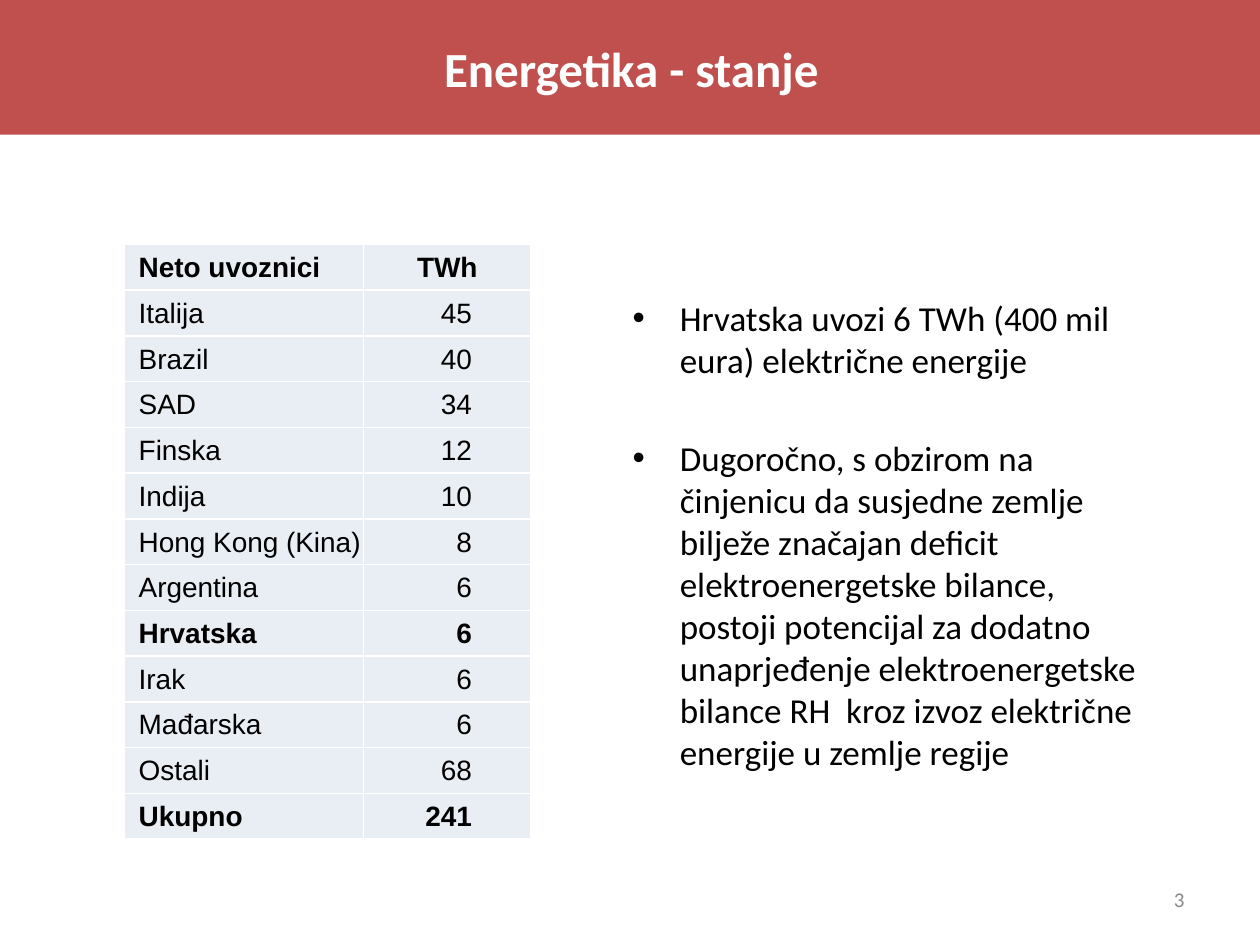
"""Builds the slide on net importers of electricity."""
from lxml import etree
from pptx import Presentation
from pptx import util as u
from pptx.dml import color as col
from pptx.enum import shapes, text
from pptx.oxml import ns

WHITE = col.RGBColor(0xFF, 0xFF, 0xFF)
BLACK = col.RGBColor(0x00, 0x00, 0x00)
GREY = col.RGBColor(0x89, 0x89, 0x89)
RED = col.RGBColor(0xC0, 0x50, 0x4D)
PALE = col.RGBColor(0xE9, 0xED, 0xF4)

LEFT, MID, RIGHT = text.PP_ALIGN.LEFT, text.PP_ALIGN.CENTER, text.PP_ALIGN.RIGHT

ROWS = [
    ("Neto uvoznici", "TWh"), ("Italija", "45"), ("Brazil", "40"),
    ("SAD", "34"), ("Finska", "12"), ("Indija", "10"),
    ("Hong Kong (Kina)", "8"), ("Argentina", "6"), ("Hrvatska", "6"),
    ("Irak", "6"), ("Mađarska", "6"), ("Ostali", "68"), ("Ukupno", "241"),
]
STRONG = {"Neto uvoznici", "Hrvatska", "Ukupno"}
POINTS = [
    "Hrvatska uvozi 6 TWh (400 mil eura) električne energije",
    "Dugoročno, s obzirom na činjenicu da susjedne zemlje bilježe značajan "
    "deficit elektroenergetske bilance, postoji potencijal za dodatno "
    "unaprjeđenje elektroenergetske bilance RH  kroz izvoz električne "
    "energije u zemlje regije",
]


class Deck:
    """Holds the style and the current slide."""

    def __init__(self, slide, face="Calibri", cells="Arial"):
        self.slide, self.face, self.cells = slide, face, cells

    def run(self, para, words, size, tint, bold=False, face=None):
        """Adds one styled run to a paragraph."""
        run = para.add_run()
        run.text = words
        font = run.font
        font.name, font.size, font.bold = face or self.face, u.Pt(size), bold
        font.color.rgb = tint

    def bar(self, x, y, w, h, tint):
        """Draws a plain filled rectangle."""
        bar = self.slide.shapes.add_shape(
            shapes.MSO_SHAPE.RECTANGLE, *map(u.Pt, (x, y, w, h)))
        bar.shadow.inherit = False
        bar.fill.solid()
        bar.fill.fore_color.rgb = tint
        bar.line.fill.background()

    def box(self, x, y, w, h, anchor=text.MSO_ANCHOR.MIDDLE):
        """Adds an empty wrapping text box and returns its frame."""
        frame = self.slide.shapes.add_textbox(
            *map(u.Pt, (x, y, w, h))).text_frame
        frame.word_wrap = True
        frame.vertical_anchor = anchor
        return frame

    def label(self, words, x, y, w, h, size, tint, align, bold=False):
        """Adds a line of text."""
        para = self.box(x, y, w, h).paragraphs[0]
        para.alignment = align
        para.line_spacing = 0.9
        self.run(para, words, size, tint, bold)

    def list(self, items, x, y, w, h, size, top, gap, dent):
        """Adds a bulleted list."""
        frame = self.box(x, y, w, h, text.MSO_ANCHOR.TOP)
        frame.margin_top = u.Pt(top)
        for i, words in enumerate(items):
            para = frame.add_paragraph() if i else frame.paragraphs[0]
            para.space_before = u.Pt(gap if i else 0)
            props = para._p.get_or_add_pPr()
            props.set("marL", str(u.Pt(dent)))
            props.set("indent", str(-u.Pt(dent)))
            etree.SubElement(props, ns.qn("a:buFont"), typeface="Arial")
            etree.SubElement(props, ns.qn("a:buChar"), char="•")
            self.run(para, words, size, BLACK)

    def cell(self, cell, words, size, align, pads, bold):
        """Fills one table cell, with white borders."""
        props = cell._tc.get_or_add_tcPr()
        for side in ("lnL", "lnR", "lnT", "lnB"):
            line = etree.SubElement(props, ns.qn("a:" + side), w=str(u.Pt(1)))
            fill = etree.SubElement(line, ns.qn("a:solidFill"))
            etree.SubElement(fill, ns.qn("a:srgbClr"), val=str(WHITE))
        cell.fill.solid()
        cell.fill.fore_color.rgb = PALE
        cell.vertical_anchor = text.MSO_ANCHOR.MIDDLE
        cell.margin_left, cell.margin_right = map(u.Pt, pads)
        cell.margin_top, cell.margin_bottom = u.Pt(0.7), u.Pt(0)
        para = cell.text_frame.paragraphs[0]
        para.alignment = align
        self.run(para, words, size, BLACK, bold, self.cells)

    def table(self, rows, x, y, wide, high, size):
        """Adds the table of names and amounts."""
        grid = self.slide.shapes.add_table(
            len(rows), len(wide),
            *map(u.Pt, (x, y, sum(wide), high * len(rows)))).table
        for c, w in enumerate(wide):
            grid.columns[c].width = u.Pt(w)
        for r, (name, sum_) in enumerate(rows):
            grid.rows[r].height = u.Pt(high)
            bold = name in STRONG
            align, pad = (RIGHT, 33.8) if r else (MID, 0.7)
            self.cell(grid.cell(r, 0), name, size, LEFT, (8.4, 0.7), bold)
            self.cell(grid.cell(r, 1), sum_, size, align, (0.7, pad), bold)


def main():
    """Builds and saves the deck."""
    show = Presentation()
    show.slide_width, show.slide_height = u.Pt(720), u.Pt(540)
    deck = Deck(show.slides.add_slide(show.slide_layouts[6]))
    deck.list(POINTS, 354.4, 129.6, 312.5, 361.4, 20, 40, 32, 27)
    deck.label("3", 516, 500.5, 168, 28.75, 12, GREY, RIGHT)
    deck.bar(0, 0, 720, 77, RED)
    deck.label("Energetika - stanje", 36.7, 9.4, 648, 62.6, 28, WHITE, MID, True)
    deck.table(ROWS, 70.9, 139.7, (136.8, 95.8), 26.15, 16)
    show.save("out.pptx")


if __name__ == "__main__":
    main()
